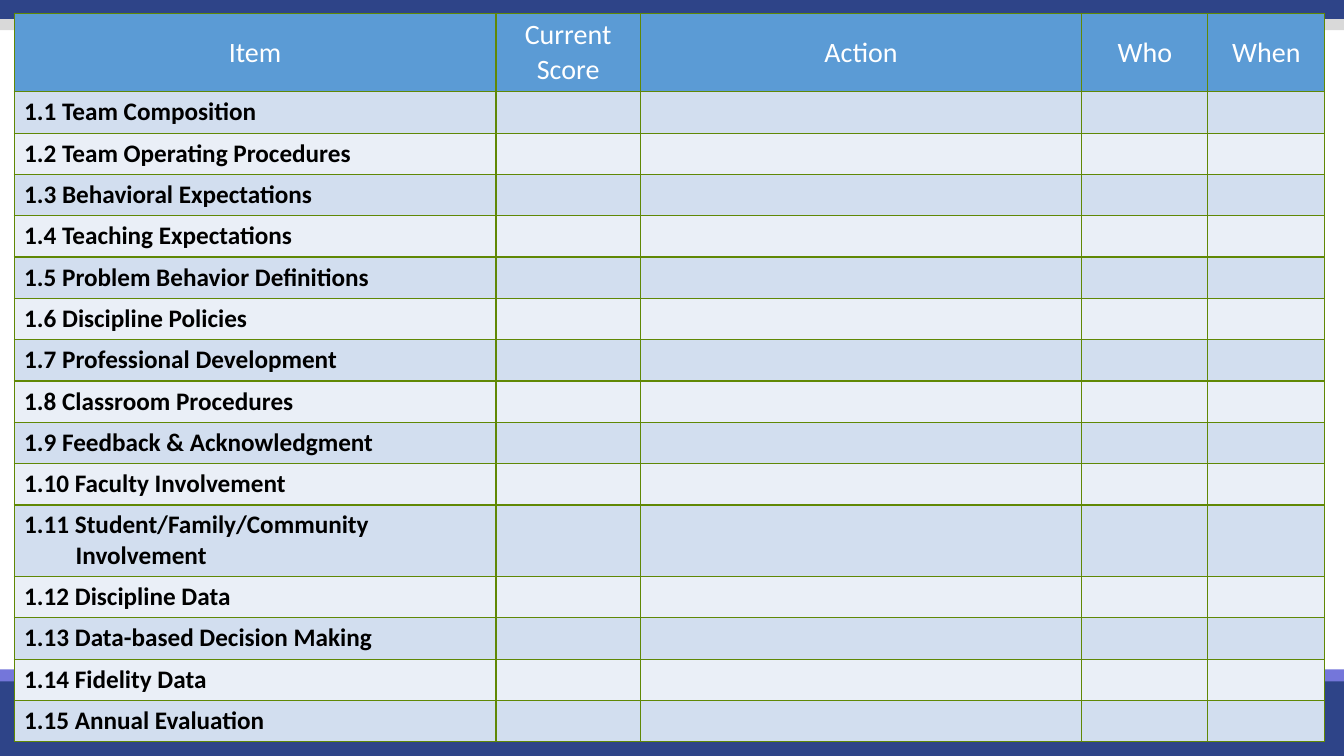
from dataclasses import dataclass

from lxml import etree
from pptx import Presentation
from pptx.dml.color import RGBColor
from pptx.enum.shapes import MSO_SHAPE
from pptx.enum.text import MSO_ANCHOR, PP_ALIGN
from pptx.oxml.ns import qn
from pptx.util import Inches, Pt

HEADINGS = ["Item", "Current\nScore", "Action", "Who", "When"]
ITEMS = [
    "Team Composition",
    "Team Operating Procedures",
    "Behavioral Expectations",
    "Teaching Expectations",
    "Problem Behavior Definitions",
    "Discipline Policies",
    "Professional Development",
    "Classroom Procedures",
    "Feedback & Acknowledgment",
    "Faculty Involvement",
    "Student/Family/Community\nInvolvement",
    "Discipline Data",
    "Data-based Decision Making",
    "Fidelity Data",
    "Annual Evaluation",
]
COLUMN_WIDTHS = [4.78, 1.43, 4.38, 1.25, 1.16]
HEADING_HEIGHT, ITEM_HEIGHT, TWO_LINE_HEIGHT = 0.77, 0.41, 0.71
TABLE_LEFT, TABLE_TOP = 0.14, 0.13
CONTINUATION_INDENT = 0.51
SLIDE_WIDTH, SLIDE_HEIGHT = 13.33, 7.5


@dataclass(frozen=True)
class Theme:
    font: str = "Calibri"
    heading_size: int = 20
    item_size: int = 18
    heading_text: str = "FFFFFF"
    item_text: str = "000000"
    heading_fill: str = "5B9BD5"
    bands: tuple = ("D2DEEF", "EAEFF7")
    grid: str = "608805"
    grid_width: int = 1
    navy: str = "2E4488"
    violet: str = "7476DA"
    grey: str = "D9D9D9"


THEME = Theme()
BARS = [
    (6.7, 0.8, THEME.navy),
    (6.64, 0.12, THEME.violet),
    (0, 0.19, THEME.navy),
    (0.19, 0.11, THEME.grey),
]


def paint(target, color):
    target.fill.solid()
    target.fill.fore_color.rgb = RGBColor.from_string(color)


def add_bar(slide, top, height, color):
    bar = slide.shapes.add_shape(
        MSO_SHAPE.RECTANGLE, 0, Inches(top), Inches(SLIDE_WIDTH), Inches(height)
    )
    bar.shadow.inherit = False
    bar.line.fill.background()
    paint(bar, color)


def outline(cell):
    properties = cell._tc.get_or_add_tcPr()
    for position, side in enumerate(("lnL", "lnR", "lnT", "lnB")):
        border = etree.Element(qn(f"a:{side}"), w=str(Pt(THEME.grid_width)))
        fill = etree.SubElement(border, qn("a:solidFill"))
        etree.SubElement(fill, qn("a:srgbClr"), val=THEME.grid)
        properties.insert(position, border)


def fill_cell(cell, text, fill, size, color, bold):
    cell.text = text
    paint(cell, fill)
    outline(cell)
    for paragraph in cell.text_frame.paragraphs:
        paragraph.font.name = THEME.font
        paragraph.font.size = Pt(size)
        paragraph.font.bold = bold
        paragraph.font.color.rgb = RGBColor.from_string(color)


def add_action_plan(slide):
    heights = [HEADING_HEIGHT] + [
        TWO_LINE_HEIGHT if "\n" in item else ITEM_HEIGHT for item in ITEMS
    ]
    plan = slide.shapes.add_table(
        len(heights), len(HEADINGS), Inches(TABLE_LEFT), Inches(TABLE_TOP),
        Inches(sum(COLUMN_WIDTHS)), Inches(sum(heights)),
    ).table
    plan.first_row = True
    plan.horz_banding = False
    for column, width in zip(plan.columns, COLUMN_WIDTHS):
        column.width = Inches(width)
    for row, height in zip(plan.rows, heights):
        row.height = Inches(height)

    for column, heading in enumerate(HEADINGS):
        cell = plan.cell(0, column)
        fill_cell(cell, heading, THEME.heading_fill,
                  THEME.heading_size, THEME.heading_text, False)
        cell.vertical_anchor = MSO_ANCHOR.MIDDLE
        for paragraph in cell.text_frame.paragraphs:
            paragraph.alignment = PP_ALIGN.CENTER

    for number, item in enumerate(ITEMS, start=1):
        band = THEME.bands[(number - 1) % len(THEME.bands)]
        for column in range(len(HEADINGS)):
            text = f"1.{number} {item}" if column == 0 else ""
            fill_cell(plan.cell(number, column), text, band,
                      THEME.item_size, THEME.item_text, True)
        for continuation in plan.cell(number, 0).text_frame.paragraphs[1:]:
            continuation._p.get_or_add_pPr().set(
                "marL", str(Inches(CONTINUATION_INDENT))
            )


def main():
    presentation = Presentation()
    presentation.slide_width = Inches(SLIDE_WIDTH)
    presentation.slide_height = Inches(SLIDE_HEIGHT)
    slide = presentation.slides.add_slide(presentation.slide_layouts[6])
    for bar in BARS:
        add_bar(slide, *bar)
    add_action_plan(slide)
    presentation.save("out.pptx")


if __name__ == "__main__":
    main()
